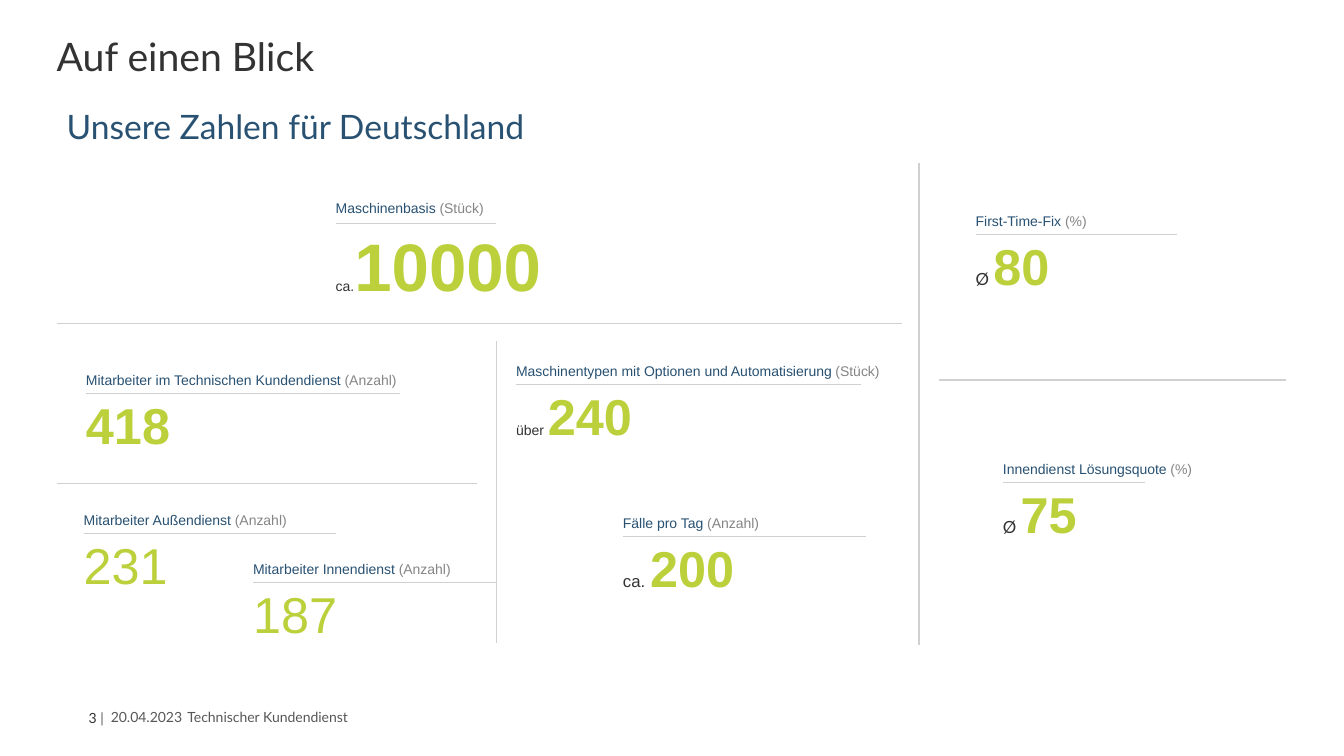
from dataclasses import dataclass

from lxml import etree
from pptx import Presentation
from pptx.dml.color import RGBColor
from pptx.enum.shapes import MSO_CONNECTOR, MSO_SHAPE
from pptx.enum.text import MSO_ANCHOR, PP_ALIGN
from pptx.oxml.ns import qn
from pptx.util import Inches, Pt

LINE = MSO_CONNECTOR.STRAIGHT
RECT = MSO_SHAPE.RECTANGLE
TOP, MIDDLE = MSO_ANCHOR.TOP, MSO_ANCHOR.MIDDLE
LEFT, RIGHT = PP_ALIGN.LEFT, PP_ALIGN.RIGHT


@dataclass(frozen=True)
class Theme:
    heading: str = "Lato"
    body: str = "Arial"
    dark: str = "333333"
    blue: str = "285172"
    lime: str = "BBD03A"
    unit: str = "858585"
    footer: str = "575757"
    rule: str = "D0D0D0"
    paper: str = "FFFFFF"
    title_size: int = 28
    subtitle_size: int = 24
    small: int = 10
    prefix: int = 12
    number: int = 36
    hero: int = 48


def run(text, size, color, font=Theme.body, bold=False):
    return text, size, color, font, bold


def write(tf, lines, inset=0, wrap=True, anchor=TOP, align=LEFT, spacing=1.0, after=0):
    tf.word_wrap = wrap
    tf.vertical_anchor = anchor
    tf.margin_left = tf.margin_right = Inches(inset)
    tf.margin_top = tf.margin_bottom = Inches(inset / 2)
    for i, runs in enumerate(lines):
        p = tf.add_paragraph() if i else tf.paragraphs[0]
        p.alignment = align
        p.line_spacing = spacing
        p.space_after = Pt(after)
        for text, size, color, font, bold in runs:
            r = p.add_run()
            r.text = text
            r.font.size = Pt(size)
            r.font.name = font
            r.font.bold = bold
            r.font.color.rgb = RGBColor.from_string(color)


class Deck:
    """Draws on one slide with places given in percent of its size."""

    def __init__(self, theme):
        self.t = theme
        self.prs = Presentation()
        self.prs.slide_width, self.prs.slide_height = Inches(13.333), Inches(7.5)
        self.s = self.prs.slides.add_slide(self.prs.slide_layouts[6])

    def place(self, x, y):
        return round(self.prs.slide_width * x / 100), round(self.prs.slide_height * y / 100)

    def text(self, x, y, w, h, *runs, **fmt):
        sp = self.s.shapes.add_textbox(*self.place(x, y), *self.place(w, h))
        write(sp.text_frame, [runs], **fmt)

    def line(self, x1, y1, x2, y2, shapes=None):
        shapes = shapes or self.s.shapes
        sp = shapes.add_connector(LINE, *self.place(x1, y1), *self.place(x2, y2))
        sp.line.color.rgb = RGBColor.from_string(self.t.rule)
        sp.line.width = Pt(1)
        etree.SubElement(sp._element.spPr, qn("a:effectLst"))

    def figure(self, x, y, w, rule_w, label, unit, number, prefix=None, size=None, bold=True, drop=3.13):
        t = self.t
        shapes = self.s.shapes.add_group_shape().shapes
        sp = shapes.add_shape(RECT, *self.place(x, y), *self.place(w, 12.67))
        sp.shadow.inherit = False
        sp.fill.solid()
        sp.fill.fore_color.rgb = RGBColor.from_string(t.paper)
        sp.line.fill.background()
        head = [run(label + " ", t.small, t.blue), run(unit, t.small, t.unit)]
        value = [prefix] if prefix else []
        value.append(run(number, size or t.number, t.lime, bold=bold))
        write(sp.text_frame, [head, value], spacing=1.1)
        self.line(x, y + drop, x + rule_w, y + drop, shapes)


def main():
    t = Theme()
    d = Deck(t)
    d.text(4.22, 4.93, 91.5, 7.2, run("Auf einen Blick", t.title_size, t.dark, t.heading), spacing=0.9)
    d.text(4.22, 13.4, 91.5, 5.6,
           run("Unsere Zahlen für Deutschland", t.subtitle_size, t.blue, t.heading),
           inset=0.1, after=6)

    for ends in (
        (4.22, 42.8, 67.13, 42.8),
        (36.93, 85.07, 36.93, 45.07),
        (4.22, 63.95, 35.48, 63.95),
        (68.38, 85.33, 68.38, 21.6),
        (69.85, 50.27, 95.7, 50.27),
    ):
        d.line(*ends)

    average = run("Ø ", t.prefix, t.dark, t.heading)
    d.figure(24.98, 26.13, 23.93, 11.93, "Maschinenbasis", "(Stück)", "10000",
             run("ca.", t.small, t.dark), t.hero, drop=3.47)
    d.figure(72.6, 27.87, 16.43, 15, "First-Time-Fix", "(%)", "80", average)
    d.figure(6.4, 48.93, 24, 23.33, "Mitarbeiter im Technischen Kundendienst", "(Anzahl)", "418")
    d.figure(38.4, 47.75, 28.8, 25.65, "Maschinentypen mit Optionen und Automatisierung",
             "(Stück)", "240", run("über ", t.small, t.dark))
    d.figure(6.23, 67.47, 18.75, 18.75, "Mitarbeiter Außendienst", "(Anzahl)", "231", bold=False)
    d.figure(74.63, 60.67, 17.25, 10.58, "Innendienst Lösungsquote", "(%)", "75", average)
    d.figure(18.83, 73.95, 18, 18.08, "Mitarbeiter Innendienst", "(Anzahl)", "187", bold=False)
    d.figure(46.35, 67.8, 18.08, 18.08, "Fälle pro Tag", "(Anzahl)", "200",
             run("ca. ", t.prefix, t.dark))

    d.text(13.95, 92.67, 33.75, 4.4, run("Technischer Kundendienst", t.small, t.footer, t.heading),
           wrap=False, anchor=MIDDLE)
    d.text(4.2, 92.67, 3.53, 4.53, run("3 ", t.small, t.dark, t.heading),
           run("|", t.small, t.footer, t.heading), anchor=MIDDLE, align=RIGHT)
    d.text(8.25, 92.67, 5.7, 4.4, run("20.04.2023", t.small, t.footer, t.heading),
           anchor=MIDDLE)
    d.prs.save("out.pptx")


if __name__ == "__main__":
    main()
